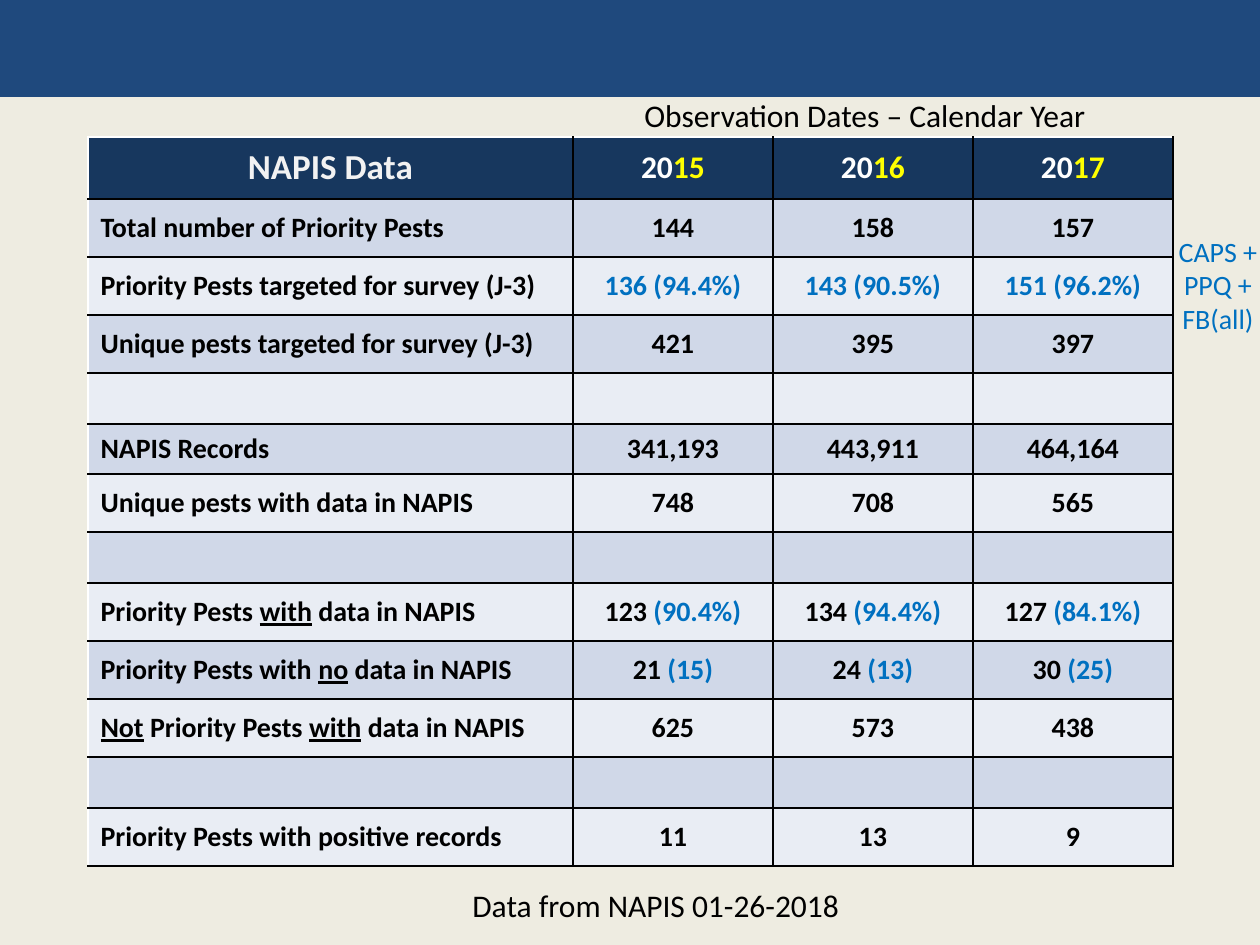
from lxml import etree
from pptx import Presentation
from pptx.dml.color import RGBColor
from pptx.enum.shapes import MSO_SHAPE
from pptx.enum.text import MSO_ANCHOR, MSO_AUTO_SIZE, PP_ALIGN
from pptx.oxml.ns import qn
from pptx.util import Pt

RECTANGLE = MSO_SHAPE.RECTANGLE
MIDDLE = MSO_ANCHOR.MIDDLE
FIT_SHAPE = MSO_AUTO_SIZE.SHAPE_TO_FIT_TEXT
LEFT, CENTER = PP_ALIGN.LEFT, PP_ALIGN.CENTER

EMU_PER_PX = 914400 // 126
BLACK, WHITE, BLUE, YELLOW = "000000", "FFFFFF", "0070C0", "FFFF00"
BAND_FILLS = ["E9EDF4", "D0D8E8"]

COLUMN_WIDTHS = [485, 200, 200, 200]
HEADER_HEIGHT, ROW_HEIGHT, RECORDS_HEIGHT, GAP_HEIGHT = 62, 58, 50, 51
HEADERS = ["NAPIS Data", "20|15", "20|16", "20|17"]
GAP = ["", "", "", ""]
ROWS = [
    ["Total number of Priority Pests", "144", "158", "157"],
    ["Priority Pests targeted for survey (J-3)", "|136 (94.4%)", "|143 (90.5%)", "|151 (96.2%)"],
    ["Unique pests targeted for survey (J-3)", "421", "395", "397"],
    GAP,
    ["NAPIS Records", "341,193", "443,911", "464,164"],
    ["Unique pests with data in NAPIS", "748", "708", "565"],
    GAP,
    ["Priority Pests _with_ data in NAPIS", "123 |(90.4%)", "134 |(94.4%)", "127 |(84.1%)"],
    ["Priority Pests with _no_ data in NAPIS", "21 |(15)", "24 |(13)", "30 |(25)"],
    ["_Not_ Priority Pests _with_ data in NAPIS", "625", "573", "438"],
    GAP,
    ["Priority Pests with positive records", "11", "13", "9"],
]


def px(length):
    return length * EMU_PER_PX


def color(value):
    return RGBColor.from_string(value)


def row_height(row):
    if row is GAP:
        return GAP_HEIGHT
    return RECORDS_HEIGHT if row[0] == "NAPIS Records" else ROW_HEIGHT


class SlideBuilder:
    font_name = "Calibri"

    def __init__(self, slide):
        self.slide = slide

    def background(self, fill):
        self.slide.background.fill.solid()
        self.slide.background.fill.fore_color.rgb = color(fill)

    def bar(self, left, top, width, height, fill):
        shape = self.slide.shapes.add_shape(RECTANGLE, px(left), px(top), px(width), px(height))
        shape.shadow.inherit = False
        shape.fill.solid()
        shape.fill.fore_color.rgb = color(fill)
        shape.line.fill.background()

    def style(self, paragraph, size, text_color, align, bold=False):
        paragraph.alignment = align
        font = paragraph.font
        font.name, font.size, font.bold = self.font_name, Pt(size), bold
        font.color.rgb = color(text_color)

    def text(self, left, top, width, height, lines, size, text_color=BLACK, align=LEFT):
        box = self.slide.shapes.add_textbox(px(left), px(top), px(width), px(height))
        frame = box.text_frame
        frame.word_wrap = False
        frame.auto_size = FIT_SHAPE
        frame.text = "\n".join(lines)
        for paragraph in frame.paragraphs:
            self.style(paragraph, size, text_color, align)

    def borders(self, cell, left, top):
        properties = cell._tc.get_or_add_tcPr()
        for side, line_color in (("L", left), ("R", BLACK), ("T", top), ("B", BLACK)):
            line = etree.SubElement(properties, qn(f"a:ln{side}"), w=str(Pt(1)))
            fill = etree.SubElement(line, qn("a:solidFill"))
            etree.SubElement(fill, qn("a:srgbClr"), val=line_color)

    def cell(self, cell, markup, fill, size, text_color, accent, align):
        cell.vertical_anchor = MIDDLE
        cell.fill.solid()
        cell.fill.fore_color.rgb = color(fill)
        paragraph = cell.text_frame.paragraphs[0]
        self.style(paragraph, size, text_color, align, bold=True)
        for accented, part in enumerate(markup.split("|")):
            for position, words in enumerate(part.split("_")):
                if not words:
                    continue
                run = paragraph.add_run()
                run.text = words
                if accented:
                    run.font.color.rgb = color(accent)
                if position % 2:
                    run.font.underline = True

    def table(self, left, top, widths, headers, rows):
        heights = [HEADER_HEIGHT] + [row_height(row) for row in rows]
        table = self.slide.shapes.add_table(
            len(heights), len(widths), px(left), px(top), px(sum(widths)), px(sum(heights))
        ).table
        table.first_row = table.horz_banding = False
        for column, width in zip(table.columns, widths):
            column.width = px(width)
        for row, height in zip(table.rows, heights):
            row.height = px(height)
        for row_index, values in enumerate([headers] + rows):
            for column_index, markup in enumerate(values):
                cell = table.cell(row_index, column_index)
                self.borders(
                    cell, BLACK if column_index else WHITE, BLACK if row_index else WHITE
                )
                if row_index == 0:
                    size, text_color = (18, WHITE) if column_index else (20, "F2F2F2")
                    self.cell(cell, markup, "17375E", size, text_color, YELLOW, CENTER)
                else:
                    size = 16 if markup else 18
                    align = CENTER if column_index else LEFT
                    fill = BAND_FILLS[row_index % 2]
                    self.cell(cell, markup, fill, size, BLACK, BLUE, align)


def main():
    presentation = Presentation()
    presentation.slide_width, presentation.slide_height = px(1260), px(945)
    builder = SlideBuilder(presentation.slides.add_slide(presentation.slide_layouts[6]))
    builder.background("EEECE1")
    builder.bar(0, 0, 1260, 97, "1F497D")
    builder.table(88, 137, COLUMN_WIDTHS, HEADERS, ROWS)
    builder.text(460, 880, 396, 51, ["Data from NAPIS 01-26-2018"], 18)
    builder.text(632, 90, 471, 51, ["Observation Dates – Calendar Year"], 18)
    builder.text(1166, 228, 104, 115, ["CAPS +", "PPQ +", "FB(all)"], 16, BLUE, CENTER)
    presentation.save("out.pptx")


if __name__ == "__main__":
    main()
